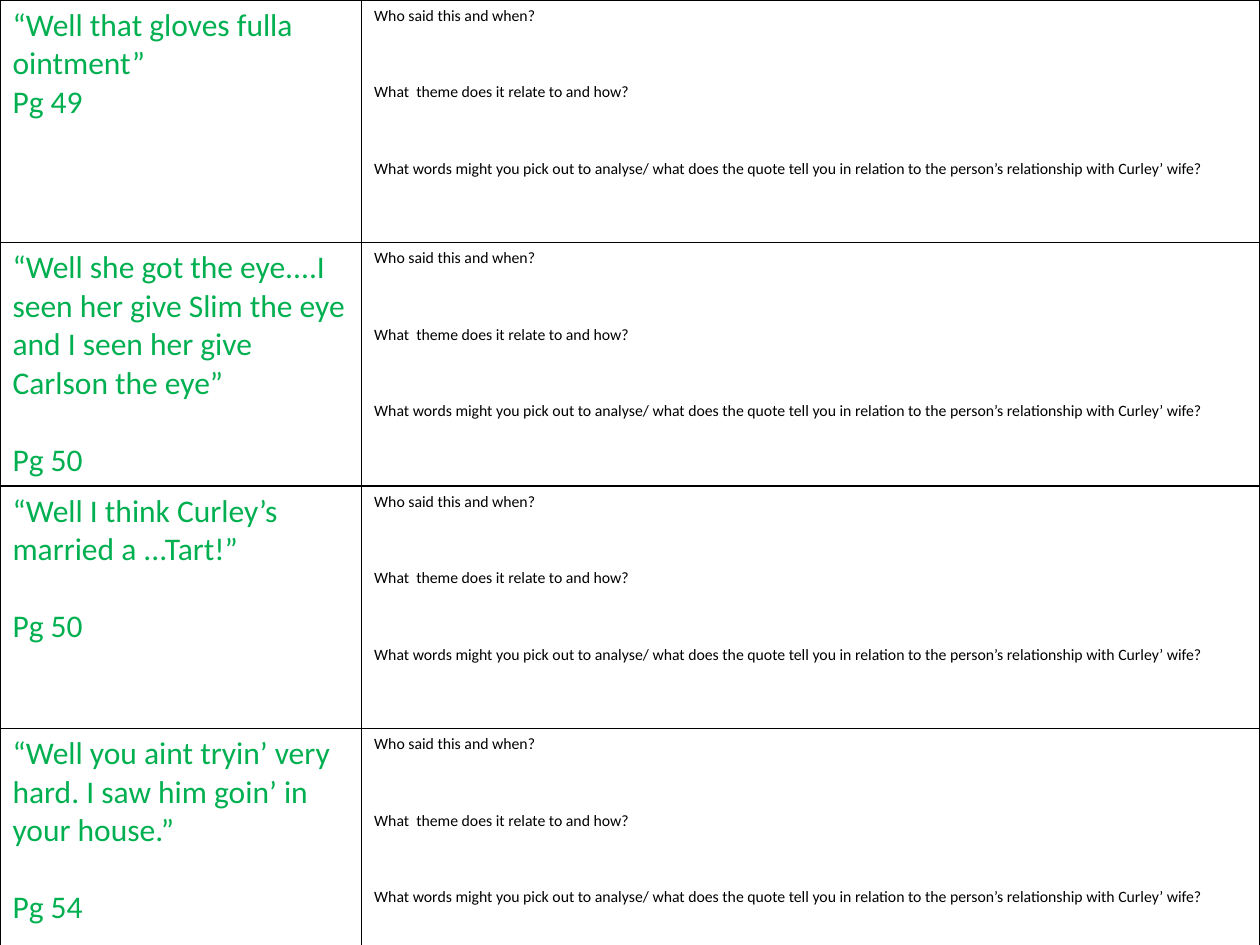
from lxml.etree import SubElement
from pptx import Presentation
from pptx.dml.color import RGBColor
from pptx.oxml.ns import qn
from pptx.util import Cm, Pt

COLORS = {"quote": "00B050", "question": "000000", "border": "000000"}
COL_WIDTHS = [7.29, 18.11]
ROW_HEIGHTS = [4.89, 4.89, 4.89, 4.64]
LINE_GAP = 22

QUOTES = [
    ("“Well that gloves fulla ointment”", "Pg 49", 0),
    ("“Well she got the eye....I seen her give Slim the eye "
     "and I seen her give Carlson the eye”", "Pg 50", LINE_GAP),
    ("“Well I think Curley’s married a ...Tart!”", "Pg 50", LINE_GAP),
    ("“Well you aint tryin’ very hard. I saw him goin’ in your house.”",
     "Pg 54", LINE_GAP),
]
QUESTIONS = [
    "Who said this and when?",
    "What  theme does it relate to and how?",
    "What words might you pick out to analyse/ what does the quote tell you "
    "in relation to the person’s relationship with Curley’ wife?",
]


class Sheet:
    font = "Calibri"
    border_pt = 1

    def __init__(self, prs):
        self.s = prs.slides.add_slide(prs.slide_layouts[6])

    def table(self, col_widths, row_heights):
        frame = self.s.shapes.add_table(
            len(row_heights), len(col_widths), Cm(0), Cm(0),
            Cm(sum(col_widths)), Cm(sum(row_heights)))
        tbl = frame.table
        tbl.first_row = tbl.horz_banding = False
        for col, width in zip(tbl.columns, col_widths):
            col.width = Cm(width)
        for row, height in zip(tbl.rows, row_heights):
            row.height = Cm(height)
        return tbl

    def borders(self, cell):
        tcPr = cell._tc.get_or_add_tcPr()
        for side in ("a:lnL", "a:lnR", "a:lnT", "a:lnB"):
            ln = SubElement(tcPr, qn(side), w=str(Pt(self.border_pt)))
            fill = SubElement(ln, qn("a:solidFill"))
            SubElement(fill, qn("a:srgbClr"), val=COLORS["border"])

    def cell(self, cell, texts, size, color, gap):
        """Fill a cell with paragraphs set gap points apart."""
        self.borders(cell)
        cell.fill.background()
        tf = cell.text_frame
        fmt = {"name": self.font, "size": Pt(size), "bold": False}
        for i, text in enumerate(texts):
            p = tf.add_paragraph() if i else tf.paragraphs[0]
            if i:
                p.space_before = Pt(gap)
            r = p.add_run()
            r.text = text
            for key, value in fmt.items():
                setattr(r.font, key, value)
            r.font.color.rgb = RGBColor.from_string(COLORS[color])


def main():
    prs = Presentation()
    prs.slide_width, prs.slide_height = Cm(25.4), Cm(19.05)
    sheet = Sheet(prs)
    tbl = sheet.table(COL_WIDTHS, ROW_HEIGHTS)
    for i, (quote, page, gap) in enumerate(QUOTES):
        sheet.cell(tbl.cell(i, 0), [quote, page], 18, "quote", gap)
        sheet.cell(tbl.cell(i, 1), QUESTIONS, 9, "question", 32.8)
    prs.save("out.pptx")


if __name__ == "__main__":
    main()
